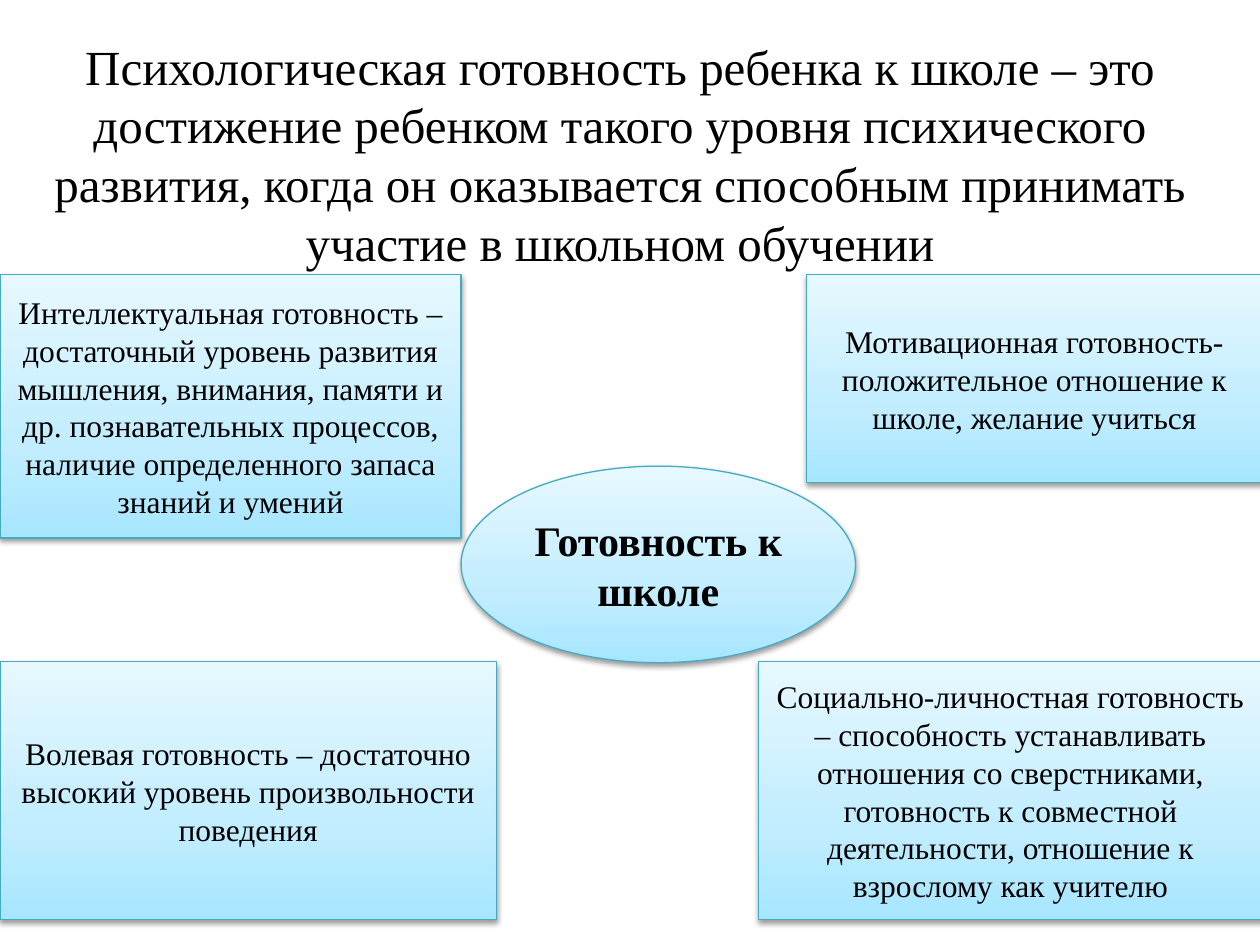
import copy
from dataclasses import dataclass

import lxml.etree
import pptx
import pptx.dml.color
import pptx.enum.shapes
import pptx.enum.text
import pptx.oxml.ns
import pptx.util

Inches = pptx.util.Inches
RGBColor = pptx.dml.color.RGBColor
Kind = pptx.enum.shapes.MSO_SHAPE
qn = pptx.oxml.ns.qn

FONT = "Times New Roman"
BLACK = RGBColor(0x00, 0x00, 0x00)
EDGE = RGBColor(0x46, 0xAA, 0xC5)
STOPS = [
    (0, RGBColor(0xA7, 0xE6, 0xFF)),
    (0.35, RGBColor(0xC1, 0xED, 0xFF)),
    (1, RGBColor(0xE7, 0xF8, 0xFF)),
]
WIDTH = 10
ROW_TOP, ROW_LOW = 2.18, 5.25
LOW_TALL = 2.05
EDGE_X = 10.02  # right-hand boxes run just past the slide edge


@dataclass
class Block:
    text: str
    left: float
    top: float
    width: float
    height: float
    kind: Kind = Kind.RECTANGLE
    size: int = 18
    bold: bool = False


def write(frame: pptx.text.text.TextFrame, text: str, size: int, bold: bool = False) -> None:
    """Put one centred run in the frame."""
    frame.word_wrap = True
    frame.vertical_anchor = pptx.enum.text.MSO_ANCHOR.MIDDLE
    para = frame.paragraphs[0]
    para.alignment = pptx.enum.text.PP_ALIGN.CENTER
    run = para.add_run()
    run.text = text
    run.font.name = FONT
    run.font.size = pptx.util.Pt(size)
    run.font.bold = bold
    run.font.color.rgb = BLACK


def shade(shape: pptx.shapes.autoshape.Shape) -> None:
    """Fill with the three-stop gradient, darkest at the bottom."""
    fill = shape.fill
    fill.gradient()
    fill.gradient_angle = 90
    group = shape.element.spPr.find(".//" + qn("a:gsLst"))
    group.insert(1, copy.deepcopy(group[0]))
    for stop, (place, color) in zip(fill.gradient_stops, STOPS):
        stop.position = place
        stop.color.rgb = color


def drop(shape: pptx.shapes.autoshape.Shape) -> None:
    """Add a soft shadow straight below."""
    shape.shadow.inherit = False
    effect = shape.element.spPr.find(qn("a:effectLst"))
    outer = lxml.etree.SubElement(
        effect, qn("a:outerShdw"), blurRad=str(pptx.util.Pt(3.1)),
        dist=str(pptx.util.Pt(1.6)), dir="5400000", rotWithShape="0")
    color = lxml.etree.SubElement(outer, qn("a:srgbClr"), val=str(BLACK))
    lxml.etree.SubElement(color, qn("a:alpha"), val="38000")


def draw(slide: pptx.slide.Slide, block: Block) -> None:
    shape = slide.shapes.add_shape(
        block.kind, Inches(block.left), Inches(block.top),
        Inches(block.width), Inches(block.height))
    shade(shape)
    shape.line.color.rgb = EDGE
    shape.line.width = pptx.util.Pt(0.75)
    drop(shape)
    write(shape.text_frame, block.text, block.size, block.bold)


BLOCKS = [
    Block("Готовность к школе", 3.66, 3.7, 3.13, 1.56, Kind.OVAL, 24, True),
    Block("Мотивационная готовность- положительное отношение к школе, "
          "желание учиться", EDGE_X - 3.62, ROW_TOP, 3.62, 1.65),
    Block("Социально-личностная готовность – способность устанавливать "
          "отношения со сверстниками, готовность к совместной деятельности, "
          "отношение к взрослому как учителю", EDGE_X - 4, ROW_LOW, 4, LOW_TALL),
    Block("Интеллектуальная готовность – достаточный уровень развития "
          "мышления, внимания, памяти и др. познавательных процессов, "
          "наличие определенного запаса знаний и умений", 0, ROW_TOP, 3.66, 2.09),
    Block("Волевая готовность – достаточно высокий уровень произвольности "
          "поведения", 0, ROW_LOW, 3.94, LOW_TALL),
]


def main() -> None:
    deck = pptx.Presentation()
    deck.slide_width, deck.slide_height = Inches(WIDTH), Inches(7.5)
    slide = deck.slides.add_slide(deck.slide_layouts[6])

    # Title
    title = slide.shapes.add_textbox(Inches(0.04), Inches(0.52), Inches(9.76), Inches(1.4))
    write(title.text_frame,
          "Психологическая готовность ребенка к школе – это достижение "
          "ребенком такого уровня психического развития, когда он оказывается "
          "способным принимать участие в школьном обучении", 28)

    # Centre oval and the four kinds of readiness
    for block in BLOCKS:
        draw(slide, block)

    deck.save("out.pptx")


if __name__ == "__main__":
    main()
